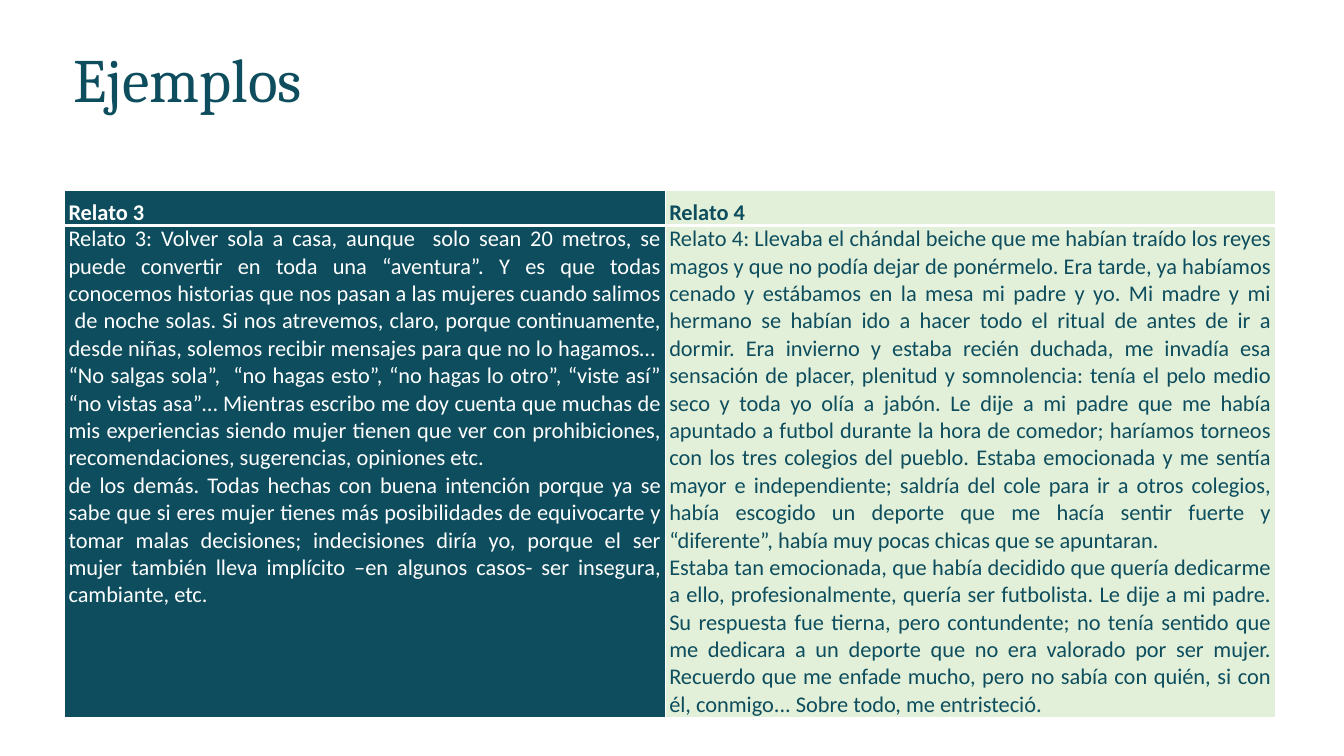
from dataclasses import dataclass

from lxml import etree
from pptx import Presentation, util as u
from pptx.dml import color
from pptx.enum import text
from pptx.oxml import ns


@dataclass(frozen=True)
class Theme:
    """Colours, fonts and type sizes of the slide."""
    teal: str = "0D4D5D"
    mint: str = "E2F0D9"
    white: str = "FFFFFF"
    title_font: str = "Cambria"
    body_font: str = "Calibri"
    title_size: int = 44
    body_size: int = 16
    thin_rule: int = 1
    header_rule: int = 3


class SlideBuilder:
    """Draws on one slide with a grid of 100 columns by 100 rows."""

    def __init__(self, presentation, theme):
        self.theme = theme
        self.column = presentation.slide_width / 100
        self.row = presentation.slide_height / 100
        self.slide = presentation.slides.add_slide(presentation.slide_layouts[6])

    def box(self, left, top, width, height):
        """Turn grid units into lengths."""
        return (round(left * self.column), round(top * self.row),
                round(width * self.column), round(height * self.row))

    def add_text(self, paragraph, wording, font, size, ink, bold=False, spacing=1.0):
        """Add one justified run to a paragraph."""
        paragraph.alignment = text.PP_ALIGN.JUSTIFY
        paragraph.line_spacing = spacing
        run = paragraph.add_run()
        run.text = wording
        run.font.name = font
        run.font.size = u.Pt(size)
        run.font.bold = bold
        run.font.color.rgb = color.RGBColor.from_string(ink)

    def title(self, wording, *place):
        """Add the slide title."""
        frame = self.slide.shapes.add_textbox(*self.box(*place)).text_frame
        frame.word_wrap = True
        self.add_text(frame.paragraphs[0], wording, self.theme.title_font,
                      self.theme.title_size, self.theme.teal)

    def borders(self, cell, top, bottom):
        """Rule the four sides of a cell in white."""
        properties = cell._tc.get_or_add_tcPr()
        sides = {"L": self.theme.thin_rule, "R": self.theme.thin_rule,
                 "T": top, "B": bottom}
        for index, (side, points) in enumerate(sides.items()):
            line = etree.Element(ns.qn(f"a:ln{side}"), w=str(u.Pt(points)))
            fill = etree.SubElement(line, ns.qn("a:solidFill"))
            etree.SubElement(fill, ns.qn("a:srgbClr"), val=self.theme.white)
            properties.insert(index, line)

    def cell(self, cell, paragraphs, fill, ink, header):
        """Fill one table cell with its paragraphs."""
        cell.margin_left = cell.margin_right = u.Inches(0.04)
        cell.margin_top = cell.margin_bottom = 0
        cell.fill.solid()
        cell.fill.fore_color.rgb = color.RGBColor.from_string(fill)
        frame = cell.text_frame
        for index, wording in enumerate(paragraphs):
            paragraph = frame.add_paragraph() if index else frame.paragraphs[0]
            self.add_text(paragraph, wording, self.theme.body_font, self.theme.body_size,
                          ink, bold=header, spacing=1.3 if header else 1.0)
        thin, thick = self.theme.thin_rule, self.theme.header_rule
        self.borders(cell, *((thin, thick) if header else (thick, thin)))

    def table(self, stories, left, top, widths, heights):
        """Add a table with one story in each column."""
        place = self.box(left, top, sum(widths), sum(heights))
        table = self.slide.shapes.add_table(len(heights), len(widths), *place).table
        for row, height in zip(table.rows, heights):
            row.height = round(height * self.row)
        looks = [(self.theme.teal, self.theme.white), (self.theme.mint, self.theme.teal)]
        for number, (heading, paragraphs) in enumerate(stories):
            table.columns[number].width = round(widths[number] * self.column)
            self.cell(table.cell(0, number), [heading], *looks[number], header=True)
            self.cell(table.cell(1, number), paragraphs, *looks[number], header=False)


STORIES = [
    ("Relato 3", [
        "Relato 3: Volver sola a casa, aunque  solo sean 20 metros, se puede convertir en "
        "toda una “aventura”. Y es que todas conocemos historias que nos pasan a las mujeres "
        "cuando salimos  de noche solas. Si nos atrevemos, claro, porque continuamente, desde "
        "niñas, solemos recibir mensajes para que no lo hagamos…  “No salgas sola”,  “no hagas "
        "esto”, “no hagas lo otro”, “viste así” “no vistas asa”… Mientras escribo me doy cuenta "
        "que muchas de mis experiencias siendo mujer tienen que ver con prohibiciones, "
        "recomendaciones, sugerencias, opiniones etc.",
        "de los demás. Todas hechas con buena intención porque ya se sabe que si eres mujer "
        "tienes más posibilidades de equivocarte y tomar malas decisiones; indecisiones diría "
        "yo, porque el ser mujer también lleva implícito –en algunos casos- ser insegura, "
        "cambiante, etc.",
    ]),
    ("Relato 4", [
        "Relato 4: Llevaba el chándal beiche que me habían traído los reyes magos y que no "
        "podía dejar de ponérmelo. Era tarde, ya habíamos cenado y estábamos en la mesa mi "
        "padre y yo. Mi madre y mi hermano se habían ido a hacer todo el ritual de antes de ir "
        "a dormir. Era invierno y estaba recién duchada, me invadía esa sensación de placer, "
        "plenitud y somnolencia: tenía el pelo medio seco y toda yo olía a jabón. Le dije a mi "
        "padre que me había apuntado a futbol durante la hora de comedor; haríamos torneos con "
        "los tres colegios del pueblo. Estaba emocionada y me sentía mayor e independiente; "
        "saldría del cole para ir a otros colegios, había escogido un deporte que me hacía "
        "sentir fuerte y “diferente”, había muy pocas chicas que se apuntaran.",
        "Estaba tan emocionada, que había decidido que quería dedicarme a ello, "
        "profesionalmente, quería ser futbolista. Le dije a mi padre. Su respuesta fue tierna, "
        "pero contundente; no tenía sentido que me dedicara a un deporte que no era valorado "
        "por ser mujer. Recuerdo que me enfade mucho, pero no sabía con quién, si con él, "
        "conmigo... Sobre todo, me entristeció.",
    ]),
]


def main():
    """Build and save the slide."""
    presentation = Presentation()
    presentation.slide_width = u.Inches(13.33)
    presentation.slide_height = u.Inches(7.5)
    builder = SlideBuilder(presentation, Theme())
    builder.title("Ejemplos", 4.7, 4.8, 90.2, 11.2)
    builder.table(STORIES, left=4.8, top=25.2, widths=(44.7, 45.4), heights=(2.8, 65.1))
    presentation.save("out.pptx")


if __name__ == "__main__":
    main()
